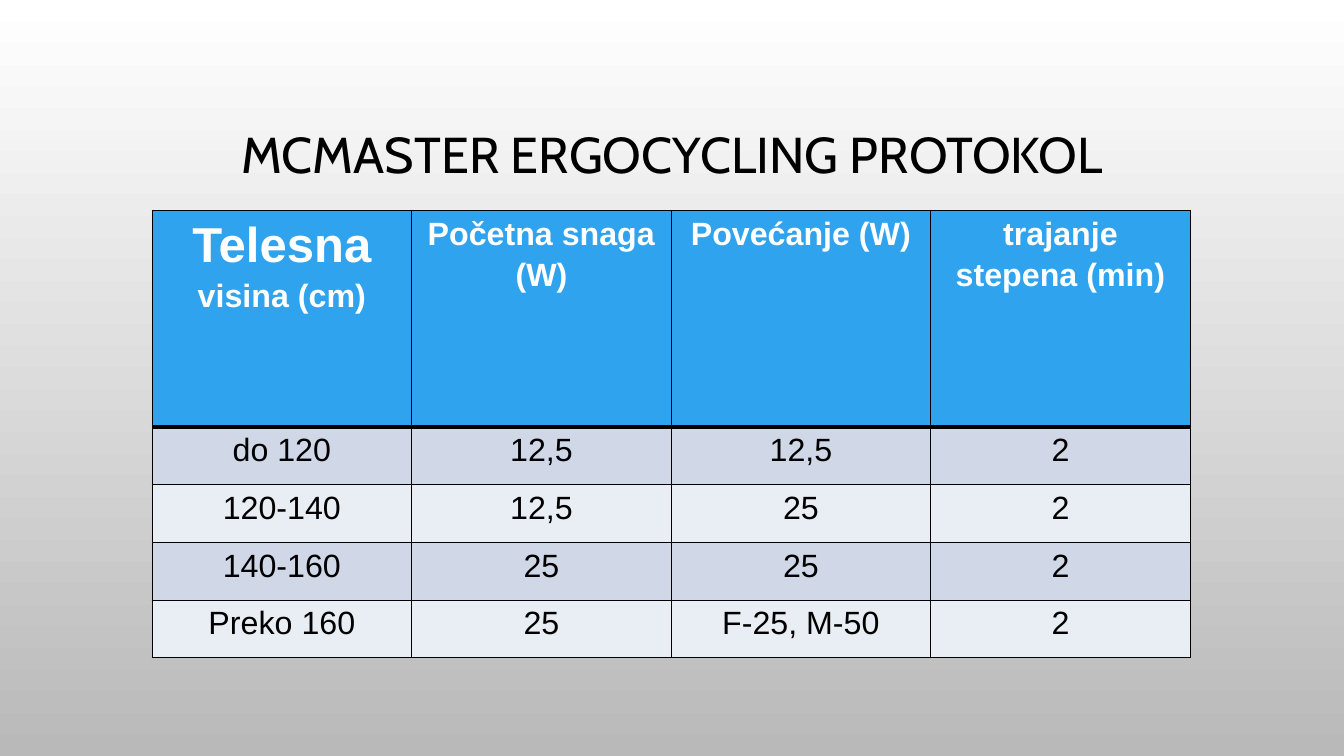
from lxml.etree import SubElement
from pptx import Presentation
from pptx.dml.color import RGBColor
from pptx.enum.text import MSO_ANCHOR, PP_ALIGN
from pptx.oxml.ns import qn
from pptx.util import Pt

BLACK = RGBColor(0, 0, 0)
WHITE = RGBColor(255, 255, 255)
GREY = RGBColor(0xB9, 0xB9, 0xB9)
BLUE = RGBColor(0x2F, 0xA3, 0xEE)
BANDS = RGBColor(0xD0, 0xD8, 0xE8), RGBColor(0xE9, 0xED, 0xF4)

HEADS = [
    [("Telesna", 35), (" visina (cm)", 23)],
    [("Početna snaga (W)", 23)],
    [("Povećanje (W)", 23)],
    [("trajanje stepena (min)", 23)],
]
STEPS = [
    ("do 120", "12,5", "12,5", "2"),
    ("120-140", "12,5", "25", "2"),
    ("140-160", "25", "25", "2"),
    ("Preko 160", "25", "F-25, M-50", "2"),
]


def style(item, **vals):
    for name, val in vals.items():
        setattr(item, name, val)


def place(shape, box):
    names = "left", "top", "width", "height"
    style(shape, **{name: Pt(val) for name, val in zip(names, box)})


def paint(slide):
    fill = slide.background.fill
    fill.gradient()
    fill.gradient_angle = 270
    for stop, color in zip(fill.gradient_stops, (WHITE, GREY)):
        stop.color.rgb = color


def write(par, runs, color, **look):
    for text, size in runs:
        run = par.add_run()
        run.text = text
        style(run.font, size=Pt(size), **look)
        run.font.color.rgb = color


def title(slide, box):
    shape = slide.shapes.title
    place(shape, box)
    frame = shape.text_frame
    style(frame, word_wrap=True, vertical_anchor=MSO_ANCHOR.MIDDLE)
    par = frame.paragraphs[0]
    style(par, alignment=PP_ALIGN.CENTER, line_spacing=0.9)
    write(par, [("MCMASTER ERGOCYCLING PROTOKOL", 36)], BLACK, name="Cabin")


def border(cell, **sides):
    props = cell._tc.get_or_add_tcPr()
    for side, width in sides.items():
        line = SubElement(props, qn("a:ln" + side), w=str(Pt(width)))
        fill = SubElement(line, qn("a:solidFill"))
        SubElement(fill, qn("a:srgbClr"), val=str(BLACK))


def entry(cell, runs, back, color, bold, above, below):
    border(cell, L=1, R=1, T=above, B=below)
    cell.fill.solid()
    cell.fill.fore_color.rgb = back
    style(cell, margin_left=Pt(7.2), margin_right=Pt(7.2),
          margin_top=0, margin_bottom=0, vertical_anchor=MSO_ANCHOR.TOP)
    par = cell.text_frame.paragraphs[0]
    style(par, alignment=PP_ALIGN.CENTER, line_spacing=1.15)
    write(par, runs, color, name="Arial", bold=bold)


def table(slide, box, head):
    count = len(STEPS)
    grid = slide.shapes.add_table(count + 1, len(HEADS), *map(Pt, box)).table
    for col in grid.columns:
        col.width = Pt(box[2] / len(HEADS))
    for row in grid.rows:
        row.height = Pt((box[3] - head) / count)
    grid.rows[0].height = Pt(head)
    for col, runs in enumerate(HEADS):
        entry(grid.cell(0, col), runs, BLUE, WHITE, True, 1, 3)
    for row, step in enumerate(STEPS):
        above = 1 if row else 3
        for col, text in enumerate(step):
            entry(grid.cell(row + 1, col), [(text, 23)], BANDS[row % 2],
                  BLACK, False, above, 1)


def main():
    deck = Presentation()
    style(deck, slide_width=Pt(960), slide_height=Pt(540))
    slide = deck.slides.add_slide(deck.slide_layouts[5])
    paint(slide)
    title(slide, (72, 49, 816, 126))
    table(slide, (108.7, 150.3, 741.6, 319.6), 154.8)
    deck.save("out.pptx")


if __name__ == "__main__":
    main()
